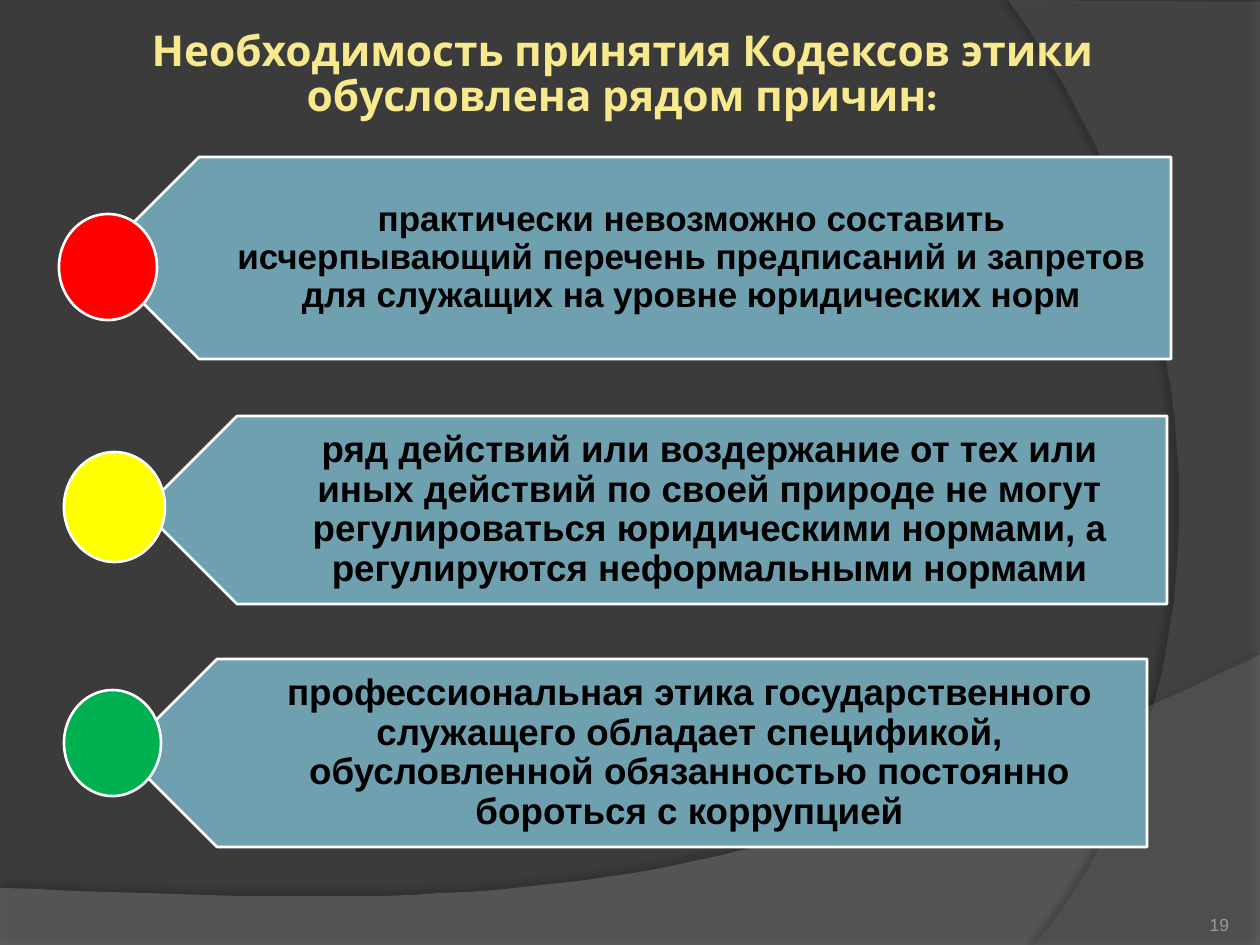
from lxml.etree import SubElement
from pptx import Presentation
from pptx.dml.color import RGBColor
from pptx.enum.shapes import MSO_SHAPE
from pptx.enum.text import MSO_ANCHOR, PP_ALIGN
from pptx.oxml.ns import qn
from pptx.util import Pt

PX = 914400 / 126
THEME = {
    "background": "3B3B3B", "arrow": "6EA0B0", "outline": "FFFFFF",
    "title": "F9E98E", "text": "000000", "number": "9D9B9A",
    "title_size": 24.3, "number_size": 10,
    "title_font": "Karla", "font": "Arial",
}


def px(*lengths):
    return [round(length * PX) for length in lengths]


def add_text(box, text, size, color, font, bold, align, anchor, insets, spacing):
    area = slide.shapes.add_textbox(*px(*box)).text_frame
    area.word_wrap = True
    area.vertical_anchor = anchor
    side_left, side_top, side_right, side_bottom = px(*insets)
    area.margin_left, area.margin_top = side_left, side_top
    area.margin_right, area.margin_bottom = side_right, side_bottom
    line = area.paragraphs[0]
    line.alignment = align
    line.line_spacing = spacing
    run = line.add_run()
    run.text = text
    run.font.size = Pt(size)
    run.font.name = font
    run.font.bold = bold
    run.font.color.rgb = RGBColor.from_string(color)


deck = Presentation()
deck.slide_width, deck.slide_height = px(1260, 945)
slide = deck.slides.add_slide(deck.slide_layouts[6])
slide.background.fill.solid()
slide.background.fill.fore_color.rgb = RGBColor.from_string(THEME["background"])

# Background waves: corners, Bezier curve, fill, opacity %, shadow (opacity %, distance pt, angle)
waves = [
    ([(0, 888), (0, 946), (1260, 946)],
     [(1260, 655), (704, 919), (493, 906), (0, 888)], "7F7F7F", 45, (35, 3.5, 270)),
    ([(1260, 2), (1260, 945)],
     [(1034, 945), (1178, 780), (1283, 378), (1008, 0)], "5E5E5E", 40, (45, 4, 180)),
]
STEPS = 40
for corners, curve, color, opacity, (shade, distance, angle) in waves:
    edge = []
    for step in range(STEPS + 1):
        t = step / STEPS
        weights = [(1 - t) ** 3, 3 * t * (1 - t) ** 2, 3 * t * t * (1 - t), t ** 3]
        edge.append(tuple(sum(w * point[axis] for w, point in zip(weights, curve))
                          for axis in (0, 1)))
    builder = slide.shapes.build_freeform(*corners[0], scale=PX)
    builder.add_line_segments(corners[1:] + edge, close=True)
    wave = builder.convert_to_shape()
    wave.line.fill.background()
    wave.fill.solid()
    wave.fill.fore_color.rgb = RGBColor.from_string(color)
    properties = wave.element.spPr
    fill_color = properties.find(qn("a:solidFill"))[0]
    SubElement(fill_color, qn("a:alpha"), val=str(opacity * 1000))
    effects = SubElement(properties, qn("a:effectLst"))
    shadow = SubElement(effects, qn("a:outerShdw"), blurRad=str(Pt(4)),
                        dist=str(Pt(distance)), dir=str(angle * 60000),
                        algn="ctr", rotWithShape="0")
    shadow_color = SubElement(shadow, qn("a:srgbClr"), val="000000")
    SubElement(shadow_color, qn("a:alpha"), val=str(shade * 1000))

# Reasons: arrow box, left edge of the text, marker box, marker colour, size, wording
reasons = [
    ((98, 157, 1073, 202), 149, (59, 214, 98, 106), "FF0000", 20,
     "практически невозможно составить исчерпывающий перечень предписаний "
     "и запретов для служащих на уровне юридических норм"),
    ((143, 416, 1024, 188), 189, (64, 452, 101, 110), "FFFF00", 21,
     "ряд действий или воздержание от тех или иных действий по своей природе "
     "не могут регулироваться юридическими нормами, а регулируются "
     "неформальными нормами"),
    ((123, 659, 1024, 188), 169, (64, 690, 97, 106), "00B050", 21,
     "профессиональная этика государственного служащего обладает спецификой, "
     "обусловленной обязанностью постоянно бороться с коррупцией"),
]
for arrow_box, text_left, marker_box, marker_color, size, wording in reasons:
    left, top, width, height = arrow_box
    for kind, box, color, turn in (
            (MSO_SHAPE.PENTAGON, arrow_box, THEME["arrow"], 180),
            (MSO_SHAPE.OVAL, marker_box, marker_color, 0)):
        part = slide.shapes.add_shape(kind, *px(*box))
        part.rotation = turn
        part.shadow.inherit = False
        part.fill.solid()
        part.fill.fore_color.rgb = RGBColor.from_string(color)
        part.line.color.rgb = RGBColor.from_string(THEME["outline"])
        part.line.width = Pt(1.5)
    add_text((text_left, top, left + width - text_left, height), wording, size,
             THEME["text"], THEME["font"], True, PP_ALIGN.CENTER,
             MSO_ANCHOR.MIDDLE, (83, 11, 20, 11), 0.9)

add_text((63, 19, 1119, 114),
         "Необходимость принятия Кодексов этики обусловлена рядом причин:",
         THEME["title_size"], THEME["title"], THEME["title_font"], True,
         PP_ALIGN.CENTER, MSO_ANCHOR.MIDDLE, (6, 6, 6, 6), 0.88)
add_text((1124, 885, 105, 50), "19", THEME["number_size"], THEME["number"],
         THEME["font"], False, PP_ALIGN.RIGHT, MSO_ANCHOR.BOTTOM, (0, 0, 0, 0), 1.0)

deck.save("out.pptx")
